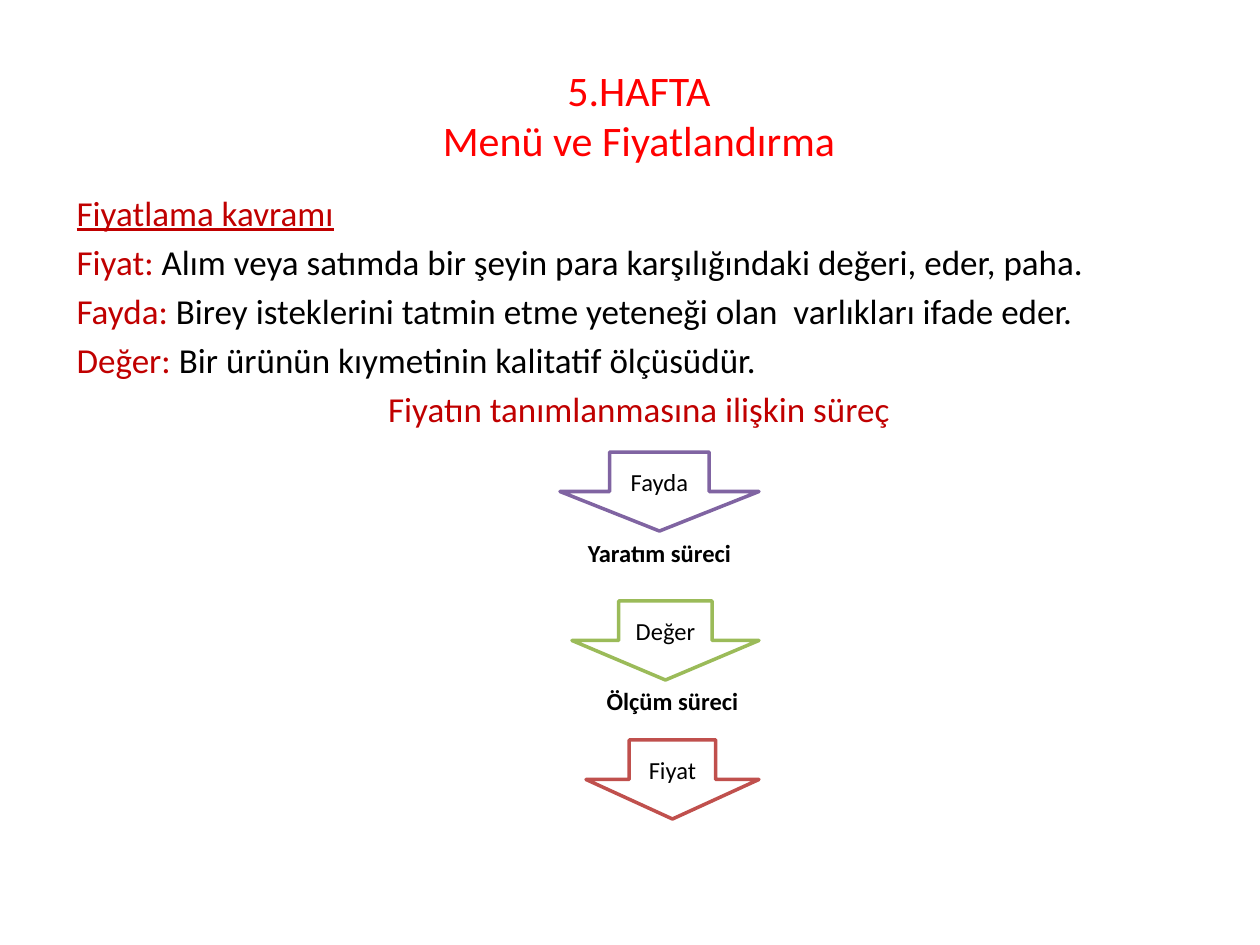
from pptx import Presentation
from pptx.dml.color import RGBColor
from pptx.enum.shapes import MSO_SHAPE
from pptx.enum.text import MSO_ANCHOR, MSO_AUTO_SIZE, PP_ALIGN
from pptx.util import Emu, Pt

ARROW = MSO_SHAPE.DOWN_ARROW
MIDDLE = MSO_ANCHOR.MIDDLE
GROW = MSO_AUTO_SIZE.SHAPE_TO_FIT_TEXT
LEFT, CENTER = PP_ALIGN.LEFT, PP_ALIGN.CENTER
RED = RGBColor(0xFF, 0x00, 0x00)
DARK = RGBColor(0xC0, 0x00, 0x00)
BLACK = RGBColor(0x00, 0x00, 0x00)
WHITE = RGBColor(0xFF, 0xFF, 0xFF)
PURPLE = RGBColor(0x80, 0x64, 0xA2)
GREEN = RGBColor(0x9B, 0xBB, 0x59)
BRICK = RGBColor(0xC0, 0x50, 0x4D)
SCALE = 914400 / 126
EDGE, HIGH = 759, 79

TERMS = [
    ("Fiyat: ", "Alım veya satımda bir şeyin para karşılığındaki değeri, eder, paha."),
    ("Fayda: ", "Birey isteklerini tatmin etme yeteneği olan  varlıkları ifade eder."),
    ("Değer: ", "Bir ürünün kıymetinin kalitatif ölçüsüdür."),
]
STEPS = [
    ("Fayda", 560, 452, PURPLE),
    ("Değer", 572, 601, GREEN),
    ("Fiyat", 586, 740, BRICK),
]
LABELS = [("Yaratım süreci", 560, 532), ("Ölçüm süreci", 586, 680)]


def px(*nums):
    """Turn pixel lengths into EMU."""
    return [Emu(round(n * SCALE)) for n in nums]


class Deck:
    """Holds the style and the current slide."""

    def __init__(self, font):
        self.font = font
        self.prs = Presentation()
        self.prs.slide_width, self.prs.slide_height = px(1260, 945)
        self.slide = self.prs.slides.add_slide(self.prs.slide_layouts[0])

    def style(self, para, size, color, align=CENTER, bold=False):
        para.alignment = align
        for run in para.runs:
            font = run.font
            font.name, font.size, font.bold = self.font, Pt(size), bold
            font.color.rgb = color

    def place(self, shape, *box):
        shape.left, shape.top, shape.width, shape.height = px(*box)
        return shape.text_frame

    def title(self, text, *box):
        frame = self.place(self.slide.shapes.title, *box)
        frame.text = text
        frame.vertical_anchor = MIDDLE
        self.style(frame.paragraphs[0], 24, RED)

    def body(self, head, terms, close, *box):
        frame = self.place(self.slide.placeholders[1], *box)
        frame.text = "\n".join([head, *(term for term, _ in terms), close])
        first, *rows, last = frame.paragraphs
        self.style(first, 20, DARK, LEFT)
        first.runs[0].font.underline = True
        for para, (_, text) in zip(rows, terms):
            para.add_run().text = text
            self.style(para, 20, DARK, LEFT)
            para.runs[1].font.color.rgb = BLACK
        self.style(last, 20, DARK)

    def arrow(self, text, left, top, color):
        shape = self.slide.shapes.add_shape(ARROW, *px(left, top, EDGE - left, HIGH))
        shape.shadow.inherit = False
        shape.fill.solid()
        shape.fill.fore_color.rgb = WHITE
        shape.line.color.rgb = color
        shape.line.width = Pt(2)
        frame = shape.text_frame
        frame.text = text
        frame.vertical_anchor = MIDDLE
        self.style(frame.paragraphs[0], 14, BLACK)

    def label(self, text, left, top):
        box = self.slide.shapes.add_textbox(*px(left, top, EDGE - left, 43))
        frame = box.text_frame
        frame.text = text
        frame.word_wrap = True
        frame.auto_size = GROW
        self.style(frame.paragraphs[0], 14, BLACK, bold=True)


def main():
    deck = Deck("Calibri")
    deck.title("5.HAFTA\vMenü ve Fiyatlandırma", 64, 45, 1150, 139)
    deck.body("Fiyatlama kavramı", TERMS, "Fiyatın tanımlanmasına ilişkin süreç",
              64, 185, 1150, 704)
    for step in STEPS:
        deck.arrow(*step)
    for label in LABELS:
        deck.label(*label)
    deck.prs.save("out.pptx")


if __name__ == "__main__":
    main()
